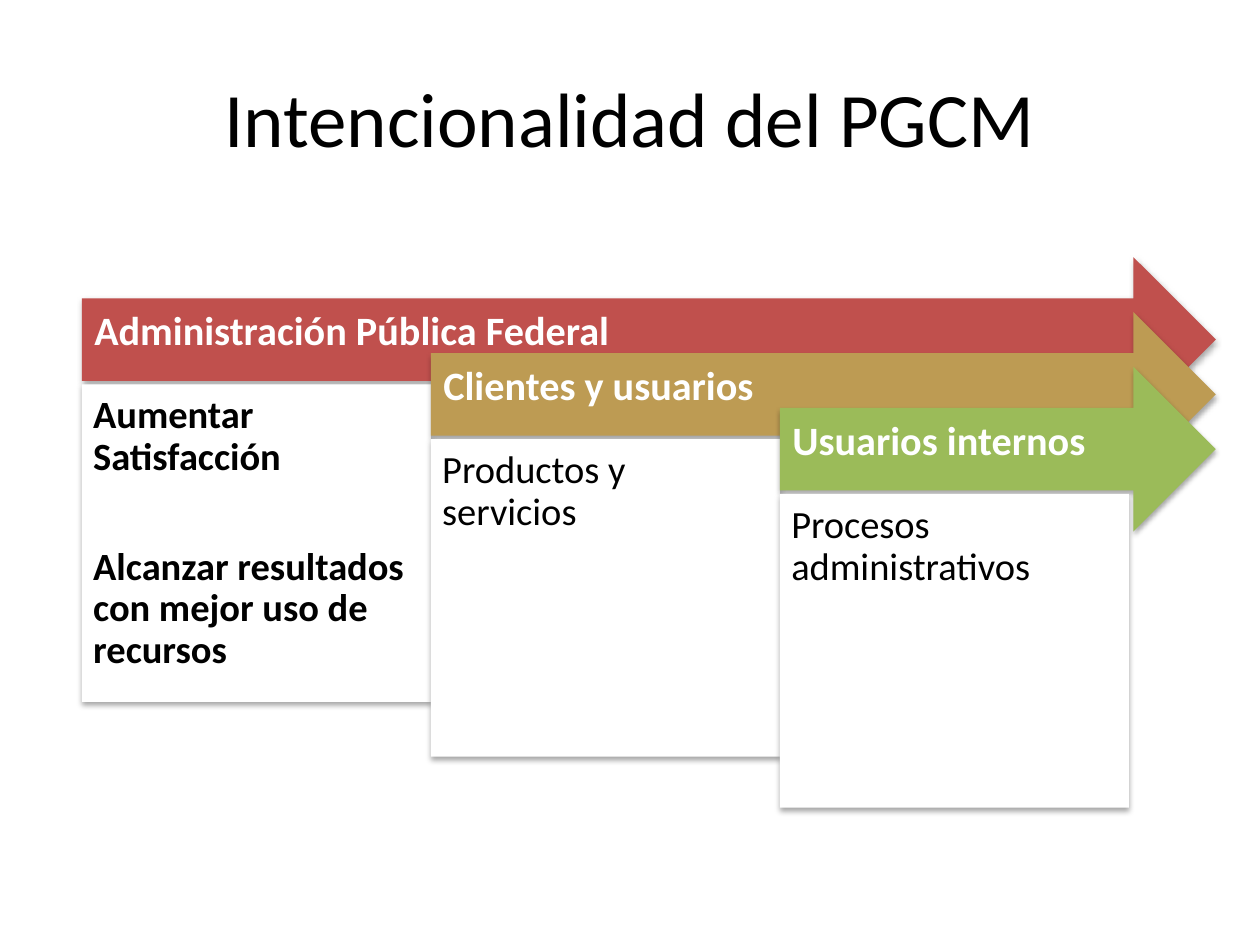
from lxml.etree import fromstring
from pptx import Presentation
from pptx.dml.color import RGBColor as RGB
from pptx.enum.shapes import MSO_SHAPE as SHAPE
from pptx.enum.text import MSO_ANCHOR as ANCHOR, PP_ALIGN as ALIGN
from pptx.oxml.ns import nsdecls, qn
from pptx.util import Inches, Pt

THEME = {
    "font": "Calibri",
    "black": RGB.from_string("000000"),
    "white": RGB.from_string("FFFFFF"),
    "arrows": [RGB.from_string(c) for c in ("C0504D", "BD9B53", "9BBB59")],
    "title": Pt(44), "head": Pt(23), "body": Pt(22),
}
SHADOW = (
    f'<a:outerShdw {nsdecls("a")} blurRad="40000" dist="23000" dir="5400000" '
    'rotWithShape="0"><a:srgbClr val="000000"><a:alpha val="35000"/>'
    '</a:srgbClr></a:outerShdw>'
)
LEFT, TOP, RIGHT = 0.65, 2.04, 9.65
COL, ROW = 2.77, 0.435
ARROW_H, BOX_DROP = 1.31, 1.01

STAGES = [
    ("Administración Pública Federal",
     ["Aumentar Satisfacción", "Alcanzar resultados con mejor uso de recursos"], True, 2.52),
    ("Clientes y usuarios", ["Productos y servicios"], False, 2.52),
    ("Usuarios internos", ["Procesos administrativos"], False, 2.49),
]


def write(tf, lines, frame, para, font, color):
    for name, value in frame.items():
        setattr(tf, name, value)
    for i, line in enumerate(lines):
        p = tf.add_paragraph() if i else tf.paragraphs[0]
        for name, value in para.items():
            setattr(p, name, value)
        if i:
            p.space_before = Pt(39)
        r = p.add_run()
        r.text = line
        for name, value in font.items():
            setattr(r.font, name, value)
        r.font.color.rgb = color


def block(kind, x, y, w, h, fill):
    sp = s.shapes.add_shape(kind, Inches(x), Inches(y), Inches(w), Inches(h))
    sp.fill.solid()
    sp.fill.fore_color.rgb = fill
    sp.line.fill.background()
    sp.shadow.inherit = False
    sp._element.spPr.find(qn("a:effectLst")).append(fromstring(SHADOW))
    return sp


prs = Presentation()
prs.slide_width, prs.slide_height = Inches(10), Inches(7.5)
s = prs.slides.add_slide(prs.slide_layouts[6])

title = s.shapes.add_textbox(Inches(0.5), Inches(0.3), Inches(9), Inches(1.25))
write(title.text_frame, ["Intencionalidad del PGCM"],
      {"word_wrap": True, "vertical_anchor": ANCHOR.MIDDLE},
      {"alignment": ALIGN.CENTER},
      {"name": THEME["font"], "size": THEME["title"]}, THEME["black"])

pad = Inches(0.09)
head_frame = {
    "word_wrap": True, "vertical_anchor": ANCHOR.MIDDLE,
    "margin_left": Inches(0.1), "margin_top": Inches(0.1),
    "margin_right": Inches(0.28), "margin_bottom": Inches(0.21),
}
body_frame = {
    "word_wrap": True, "vertical_anchor": ANCHOR.TOP, "margin_left": pad,
    "margin_top": pad, "margin_right": pad, "margin_bottom": pad,
}
para = {"alignment": ALIGN.LEFT, "line_spacing": 0.9}

for i, (head, body, bold, box_h) in enumerate(STAGES):
    x, y = LEFT + i * COL, TOP + i * ROW
    arrow = block(SHAPE.RIGHT_ARROW, x, y, RIGHT - x, ARROW_H, THEME["arrows"][i])
    write(arrow.text_frame, [head], head_frame, para,
          {"name": THEME["font"], "size": THEME["head"], "bold": True}, THEME["white"])
    box = block(SHAPE.RECTANGLE, x, y + BOX_DROP, COL, box_h, THEME["white"])
    write(box.text_frame, body, body_frame, para,
          {"name": THEME["font"], "size": THEME["body"], "bold": bold}, THEME["black"])

prs.save("out.pptx")
